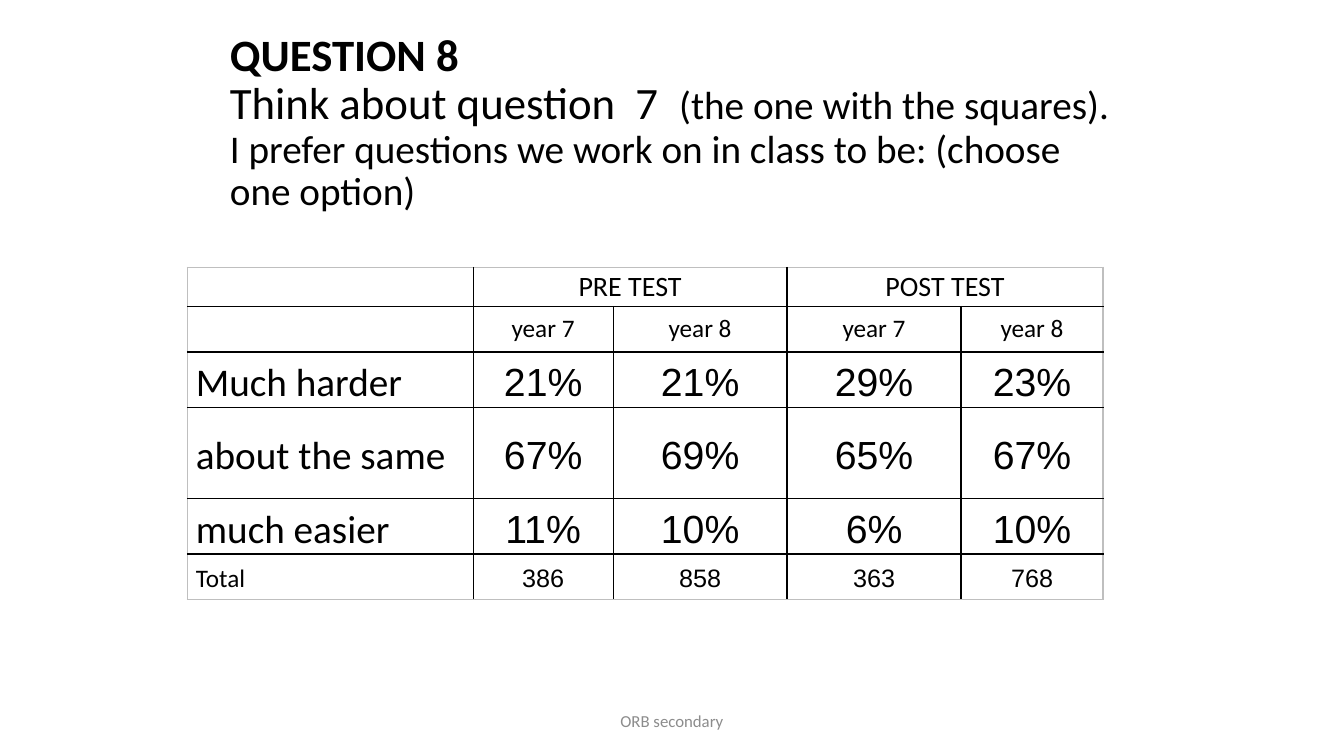
from copy import deepcopy
from dataclasses import dataclass

from lxml import etree
from pptx import Presentation
from pptx.dml.color import RGBColor
from pptx.enum.text import MSO_ANCHOR, MSO_AUTO_SIZE, PP_ALIGN
from pptx.oxml.ns import qn
from pptx.util import Pt

LEFT, CENTER = PP_ALIGN.LEFT, PP_ALIGN.CENTER
MIDDLE = MSO_ANCHOR.MIDDLE
NO_FIT = MSO_AUTO_SIZE.NONE


@dataclass(frozen=True)
class Theme:
    text_font: str = "Calibri"
    number_font: str = "Arial"
    ink: str = "000000"
    edge: str = "BFBFBF"
    footer: str = "8C8C8C"
    heading: int = 32
    body: int = 28
    group: int = 20
    small: int = 18
    note: int = 12


THEME = Theme()

# One list per line of the title: (text, size, bold)
TITLE_LINES = [
    [("QUESTION 8", THEME.heading, True)],
    [("Think about question  7  ", THEME.heading, False),
     ("(the one with the squares).", THEME.body, False)],
    [("I prefer questions we work on in class to be: (choose one option)",
      THEME.body, False)],
]
# (height, type size, cells); None continues the cell to its left
ROWS = [
    (28, THEME.group, ["", "PRE TEST", None, "POST TEST", None]),
    (32.5, THEME.small, ["", "year 7", "year 8", "year 7", "year 8"]),
    (32.5, THEME.body, ["Much harder", "21%", "21%", "29%", "23%"]),
    (65.5, THEME.body, ["about the same", "67%", "69%", "65%", "67%"]),
    (32.5, THEME.body, ["much easier", "11%", "10%", "6%", "10%"]),
    (32.5, THEME.small, ["Total", "386", "858", "363", "768"]),
]
COLUMN_WIDTHS = [204, 100, 124.25, 124.25, 101.5]
HEADER_ROWS = 2
FOOTER = "ORB secondary"

TITLE_BOX = (157, 43, 648, 90)
TABLE_ORIGIN = (134, 191)
FOOTER_BOX = (318, 500.5, 324, 29)


def style_font(font, size, name=THEME.text_font, color=THEME.ink, bold=False):
    font.size, font.name, font.bold = Pt(size), name, bold
    font.color.rgb = RGBColor.from_string(color)


def place(shape, box):
    shape.left, shape.top, shape.width, shape.height = map(Pt, box)


def add_title(page):
    title = page.shapes.title
    place(title, TITLE_BOX)
    frame = title.text_frame
    frame.word_wrap, frame.auto_size, frame.vertical_anchor = True, NO_FIT, MIDDLE
    para = frame.paragraphs[0]
    para.alignment, para.line_spacing = LEFT, 0.9
    for number, line in enumerate(TITLE_LINES):
        if number:
            para.add_line_break()
            # A break takes the type size of the line it ends
            para._p[-1].append(deepcopy(span._r.rPr))
        for text, size, bold in line:
            span = para.add_run()
            span.text = text
            style_font(span.font, size, bold=bold)


def draw_borders(cell, colors):
    """Give the cell one line per side; colors run left, right, top, bottom."""
    properties = cell._tc.get_or_add_tcPr()
    for position, (side, color) in enumerate(zip("LRTB", colors)):
        line = etree.Element(qn(f"a:ln{side}"), w=str(Pt(1)))
        fill = etree.SubElement(line, qn("a:solidFill"))
        etree.SubElement(fill, qn("a:srgbClr"), val=color)
        properties.insert(position, line)


def add_results(page):
    row_count, column_count = len(ROWS), len(COLUMN_WIDTHS)
    width, height = sum(COLUMN_WIDTHS), sum(row[0] for row in ROWS)
    table = page.shapes.add_table(
        row_count, column_count, *map(Pt, (*TABLE_ORIGIN, width, height))).table
    table.first_row = table.horz_banding = False
    for column, column_width in zip(table.columns, COLUMN_WIDTHS):
        column.width = Pt(column_width)

    for r, (row_height, size, texts) in enumerate(ROWS):
        table.rows[r].height = Pt(row_height)
        for c, text in enumerate(texts):
            cell = table.cell(r, c)
            cell.fill.background()
            cell.margin_left = cell.margin_right = Pt(6)
            cell.margin_top = cell.margin_bottom = 0
            cell.vertical_anchor = MIDDLE
            # A cell also ends the row when only its own continuation follows
            ends_row = all(later is None for later in texts[c + 1:])
            outer = (c == 0, ends_row, r == 0, r == row_count - 1)
            draw_borders(cell, [THEME.edge if side else THEME.ink for side in outer])
            if text is None:
                table.cell(r, c - 1).merge(cell)
                continue
            is_result = r >= HEADER_ROWS
            para = cell.text_frame.paragraphs[0]
            para.text = text
            para.alignment = CENTER if c else LEFT
            if is_result:
                para.line_spacing = 1.15
            name = THEME.number_font if is_result and c else THEME.text_font
            style_font(para.font, size, name)


def add_footer(page):
    frame = page.shapes.add_textbox(*map(Pt, FOOTER_BOX)).text_frame
    frame.word_wrap, frame.vertical_anchor = True, MIDDLE
    para = frame.paragraphs[0]
    para.text, para.alignment = FOOTER, CENTER
    style_font(para.font, THEME.note, color=THEME.footer)


def main():
    deck = Presentation()
    deck.slide_width, deck.slide_height = Pt(960), Pt(540)
    page = deck.slides.add_slide(deck.slide_layouts[5])
    add_title(page)
    add_results(page)
    add_footer(page)
    deck.save("out.pptx")


if __name__ == "__main__":
    main()
